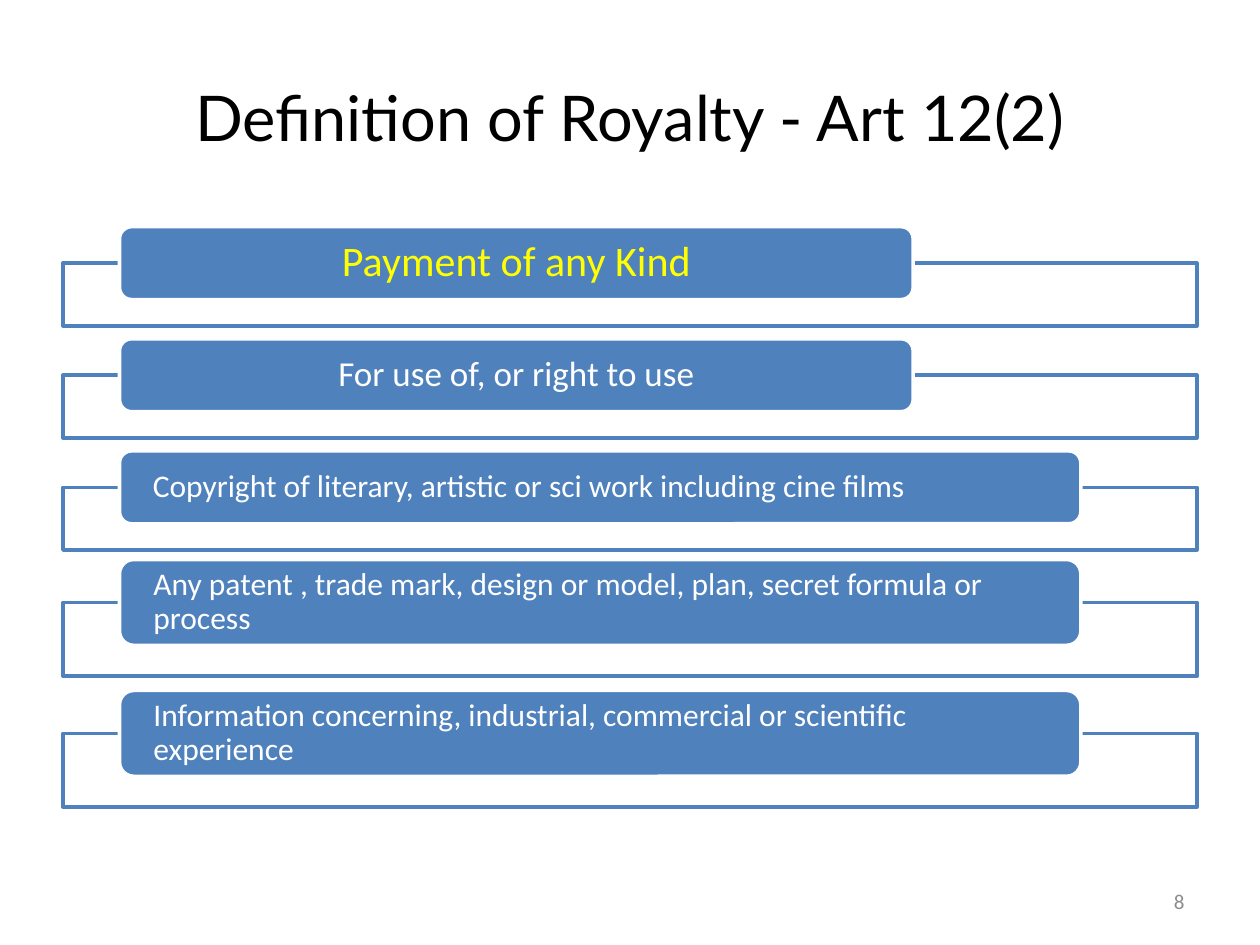
from pptx import Presentation
from pptx.dml.color import RGBColor
from pptx.enum.shapes import MSO_SHAPE
from pptx.enum.text import MSO_ANCHOR, PP_ALIGN
from pptx.util import Cm, Pt

FRAME, PILL = MSO_SHAPE.RECTANGLE, MSO_SHAPE.ROUNDED_RECTANGLE
MIDDLE = MSO_ANCHOR.MIDDLE
LEFT, CENTER, RIGHT = PP_ALIGN.LEFT, PP_ALIGN.CENTER, PP_ALIGN.RIGHT

COLORS = {
    "blue": "4F81BD",
    "white": "FFFFFF",
    "yellow": "FFFF00",
    "black": "000000",
    "grey": "8C8C8C",
}
MARGIN, CONTENT_WIDTH = 1.27, 22.86
PILL_LEFT, NARROW, WIDE = 2.41, 16, 19.38
FRAME_RATIO = 0.86  # frame height relative to its pill

# Each group: top of first pill, pitch, pill height, and its elements as
# (wording, pill width, size, colour, alignment)
GROUPS = [
    (4.57, 2.26, 1.47, [
        ("Payment of any Kind", NARROW, 24, "yellow", CENTER),
        ("For use of, or right to use", NARROW, 20, "white", CENTER),
        ("Copyright of literary, artistic or sci work including cine films",
         WIDE, 18, "white", LEFT),
    ]),
    (11.28, 2.64, 1.73, [
        ("Any patent , trade mark, design or model, plan, secret formula or process",
         WIDE, 18, "white", LEFT),
        ("Information concerning, industrial, commercial or scientific experience",
         WIDE, 18, "white", LEFT),
    ]),
]


def rgb(name):
    return RGBColor.from_string(COLORS[name])


def write(shape, wording, size, color, align, font="Calibri"):
    frame = shape.text_frame
    frame.word_wrap = True
    frame.vertical_anchor = MIDDLE
    paragraph = frame.paragraphs[0]
    paragraph.text = wording
    paragraph.alignment = align
    paragraph.font.name = font
    paragraph.font.size = Pt(size)
    paragraph.font.color.rgb = rgb(color)
    return frame


def add_label(slide, box, *text):
    write(slide.shapes.add_textbox(*map(Cm, box)), *text)


def add_box(slide, kind, box, fill, line):
    shape = slide.shapes.add_shape(kind, *map(Cm, box))
    shape.shadow.inherit = False
    shape.fill.solid()
    shape.fill.fore_color.rgb = rgb(fill)
    shape.line.color.rgb = rgb(line)
    shape.line.width = Pt(2)
    return shape


def add_element(slide, top, height, wording, width, size, color, align):
    """Add a pill whose middle sits on the top edge of an outlined frame."""
    frame_box = (MARGIN, top + height / 2, CONTENT_WIDTH, height * FRAME_RATIO)
    add_box(slide, FRAME, frame_box, "white", "blue")
    pill = add_box(slide, PILL, (PILL_LEFT, top, width, height), "blue", "white")
    text = write(pill, wording, size, color, align)
    text.margin_left = text.margin_right = Cm(0.6)
    text.margin_top = text.margin_bottom = 0
    text.paragraphs[0].line_spacing = 0.9


def main():
    deck = Presentation()
    deck.slide_width, deck.slide_height = Cm(25.4), Cm(19.05)
    slide = deck.slides.add_slide(deck.slide_layouts[6])
    add_label(slide, (MARGIN, 0.76, CONTENT_WIDTH, 3.18),
              "Definition of Royalty - Art 12(2)", 36, "black", CENTER, "Lato")
    for first_top, pitch, height, elements in GROUPS:
        for row, element in enumerate(elements):
            add_element(slide, first_top + row * pitch, height, *element)
    add_label(slide, (18.2, 17.65, 5.93, 1.02), "8", 12, "grey", RIGHT)
    deck.save("out.pptx")


if __name__ == "__main__":
    main()
